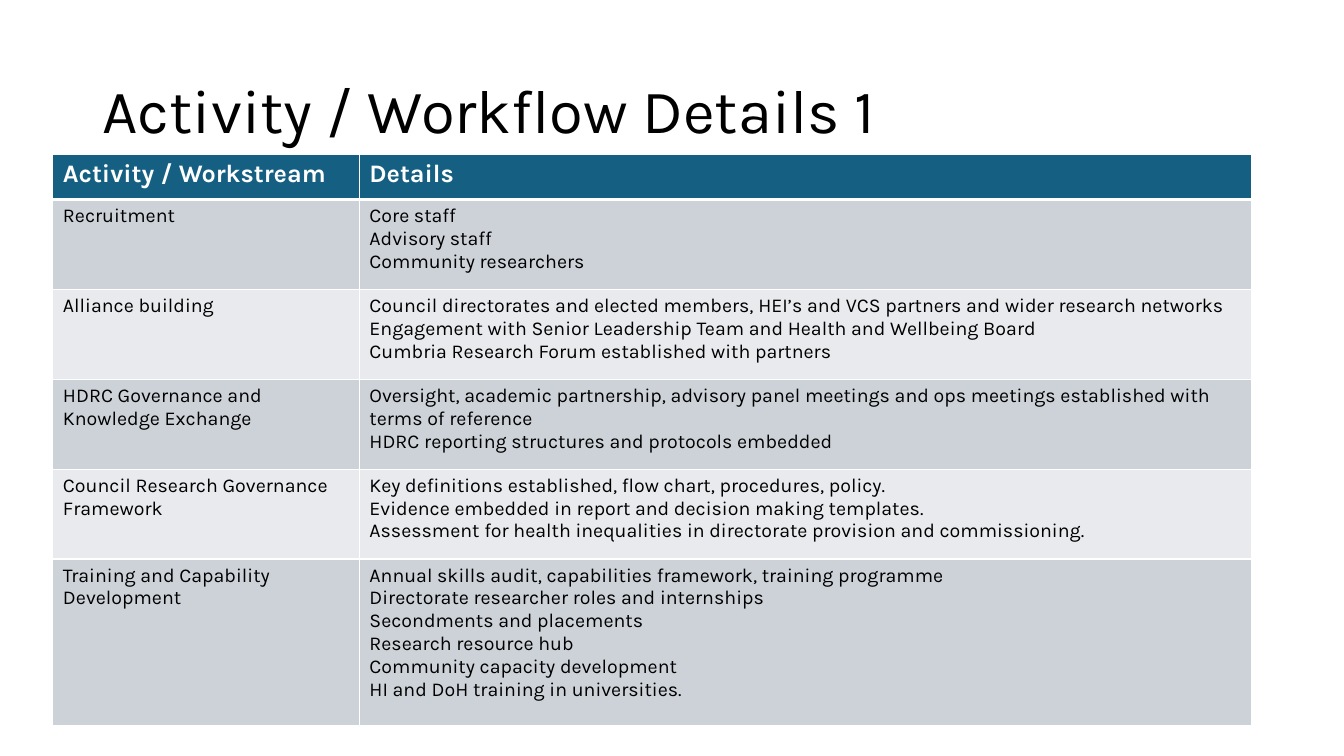
from lxml.etree import SubElement
from pptx import Presentation
from pptx.dml.color import RGBColor
from pptx.enum.text import MSO_ANCHOR, PP_ALIGN
from pptx.oxml.ns import qn
from pptx.util import Pt

TITLE = "Activity / Workflow Details 1"
HEADINGS = ("Activity / Workstream", "Details")
WORKSTREAMS = [
    ("Recruitment", ["Core staff", "Advisory staff", "Community researchers"]),
    ("Alliance building", [
        "Council directorates and elected members, HEI’s and VCS partners and wider research networks",
        "Engagement with Senior Leadership Team and Health and Wellbeing Board",
        "Cumbria Research Forum established with partners",
    ]),
    ("HDRC Governance and Knowledge Exchange", [
        "Oversight, academic partnership, advisory panel meetings and ops meetings "
        "established with terms of reference",
        "HDRC reporting structures and protocols embedded",
    ]),
    ("Council Research Governance Framework", [
        "Key definitions established, flow chart, procedures, policy.",
        "Evidence embedded in report and decision making templates.",
        "Assessment for health inequalities in directorate provision and commissioning.",
    ]),
    ("Training and Capability Development", [
        "Annual skills audit, capabilities framework, training programme",
        "Directorate researcher roles and internships",
        "Secondments and placements",
        "Research resource hub",
        "Community capacity development",
        "HI and DoH training in universities.",
    ]),
]

FONT = "Karla"
BLACK, WHITE, TEAL = "000000", "FFFFFF", "156082"
BANDS = ("CCD2D8", "E8EAED")
TABLE_LEFT, TABLE_TOP = 37.8, 110.4
COLUMN_WIDTHS = (218.9, 637.6)
HEADER_HEIGHT, BODY_HEIGHT, LAST_HEIGHT = 32.2, 64.2, 119.2
THIN, THICK = 1, 3


def color(value):
    return RGBColor.from_string(value)


def write(frame, lines, *, size, fill=BLACK, bold=False, spacing=None):
    """Fill a text frame with one paragraph per line."""
    for index, line in enumerate(lines):
        para = frame.add_paragraph() if index else frame.paragraphs[0]
        para.alignment = PP_ALIGN.LEFT
        if spacing:
            para.line_spacing = spacing
        span = para.add_run()
        span.text = line
        span.font.name = FONT
        span.font.size = Pt(size)
        span.font.bold = bold
        span.font.color.rgb = color(fill)


def add_borders(cell, top, bottom):
    """Draw white cell borders; they must come before the cell's fill."""
    properties = cell._tc.get_or_add_tcPr()
    sides = {"lnL": THIN, "lnR": THIN, "lnT": top, "lnB": bottom}
    for position, (side, width) in enumerate(sides.items()):
        line = SubElement(properties, qn(f"a:{side}"), w=str(Pt(width)))
        SubElement(SubElement(line, qn("a:solidFill")), qn("a:srgbClr"), val=WHITE)
        properties.insert(position, line)


def add_title(page):
    title = page.shapes.title
    title.left, title.top = Pt(66), Pt(28.8)
    title.width, title.height = Pt(828), Pt(104.4)
    title.text_frame.vertical_anchor = MSO_ANCHOR.MIDDLE
    title.text_frame.word_wrap = True
    write(title.text_frame, [TITLE], size=44, spacing=0.9)


def add_workstream_table(page):
    rows = [[[heading] for heading in HEADINGS]]
    rows += [([name], details) for name, details in WORKSTREAMS]
    heights = [HEADER_HEIGHT] + [BODY_HEIGHT] * (len(WORKSTREAMS) - 1) + [LAST_HEIGHT]
    table = page.shapes.add_table(
        len(rows), len(COLUMN_WIDTHS), Pt(TABLE_LEFT), Pt(TABLE_TOP),
        Pt(sum(COLUMN_WIDTHS)), Pt(sum(heights))).table
    for column, width in zip(table.columns, COLUMN_WIDTHS):
        column.width = Pt(width)
    for index, (row, height, texts) in enumerate(zip(table.rows, heights, rows)):
        row.height = Pt(height)
        header = index == 0
        for cell, lines in zip(row.cells, texts):
            cell.fill.solid()
            cell.fill.fore_color.rgb = color(TEAL if header else BANDS[(index - 1) % 2])
            add_borders(cell, top=THICK if index == 1 else THIN,
                        bottom=THICK if header else THIN)
            write(cell.text_frame, lines, size=18 if header else 14,
                  fill=WHITE if header else BLACK, bold=header)


def main():
    deck = Presentation()
    deck.slide_width, deck.slide_height = Pt(960), Pt(540)
    page = deck.slides.add_slide(deck.slide_layouts[5])
    add_title(page)
    add_workstream_table(page)
    deck.save("out.pptx")


if __name__ == "__main__":
    main()
